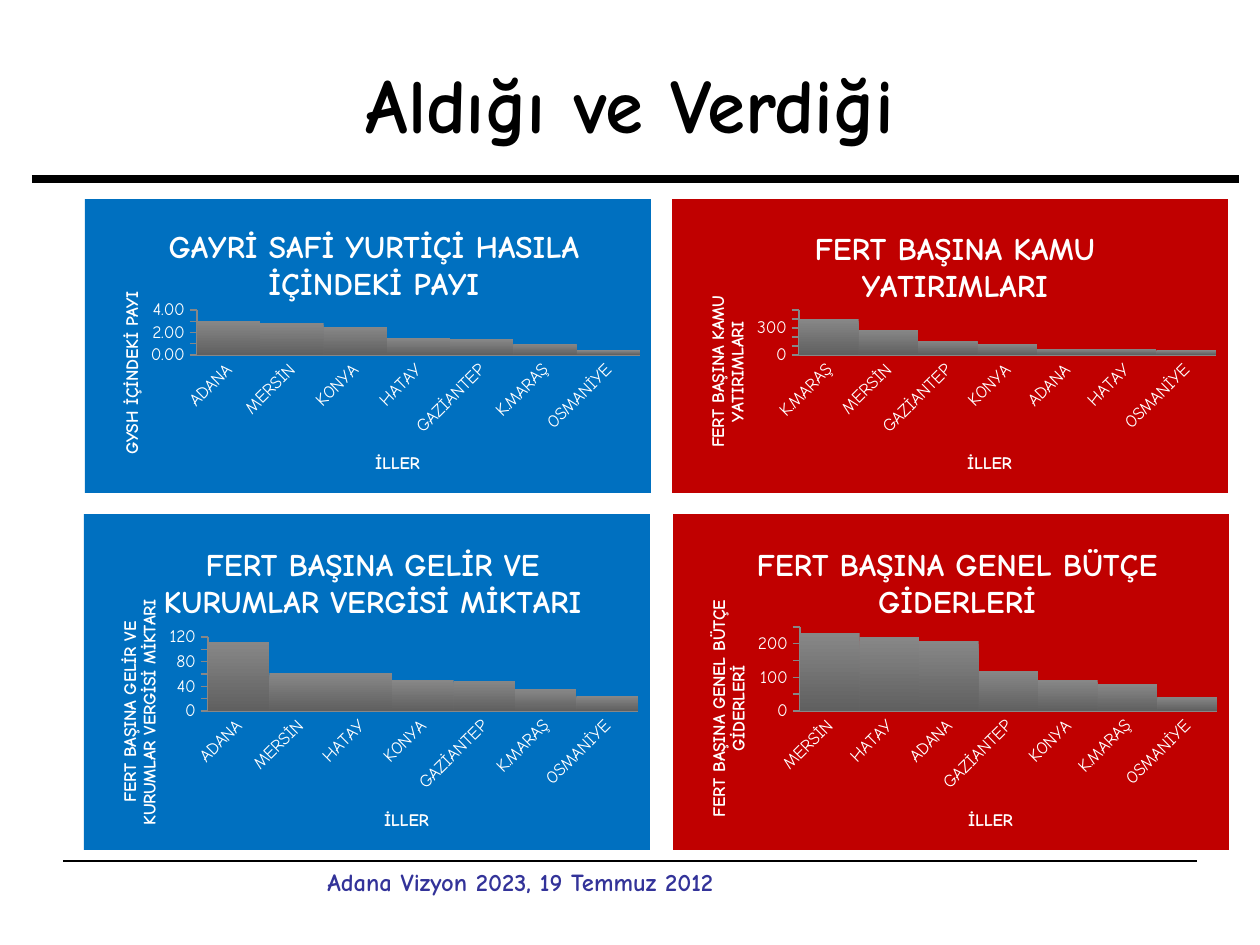
from collections import namedtuple

from lxml.etree import SubElement
from pptx import Presentation
from pptx.chart.data import CategoryChartData
from pptx.dml.color import RGBColor
from pptx.enum.chart import XL_CHART_TYPE as ChartType, XL_TICK_MARK as Tick
from pptx.enum.text import MSO_ANCHOR as Anchor, PP_ALIGN as Align
from pptx.oxml import parse_xml
from pptx.oxml.ns import nsdecls, qn
from pptx.util import Emu, Pt

FONT = "Comic Neue"
BLACK = RGBColor(0x00, 0x00, 0x00)
WHITE = RGBColor(0xFF, 0xFF, 0xFF)
NAVY = RGBColor(0x33, 0x33, 0x99)
BLUE = RGBColor(0x00, 0x70, 0xC0)
RED = RGBColor(0xC0, 0x00, 0x00)
LIGHT_GREY = RGBColor(0x87, 0x87, 0x87)
DARK_GREY = RGBColor(0x60, 0x60, 0x60)

Panel = namedtuple("Panel", "title measure area plot title_at cat_at val_at "
                   "color top step format values")
PANELS = [
    Panel("GAYRİ SAFİ YURTİÇİ HASILA İÇİNDEKİ PAYI", "GYSH İÇİNDEKİ PAYI",
          (85, 199, 566, 294), (197, 310, 443, 45), (163, 220), (372, 448),
          (117, 288), BLUE, 4, 1, "0.00",
          {"ADANA": 3, "MERSİN": 2.8, "KONYA": 2.5, "HATAY": 1.5,
           "GAZİANTEP": 1.4, "K.MARAŞ": 1, "OSMANİYE": 0.4}),
    Panel("FERT BAŞINA GELİR VE KURUMLAR VERGİSİ MİKTARI",
          "FERT BAŞINA GELİR VE KURUMLAR VERGİSİ MİKTARI",
          (84, 514, 566, 336), (208, 637, 430, 74), (158, 538), (381, 805),
          (115, 596), BLUE, 120, 20, "#,##0",
          {"ADANA": 112, "MERSİN": 61, "HATAY": 61, "KONYA": 50,
           "GAZİANTEP": 49, "K.MARAŞ": 35, "OSMANİYE": 24}),
    Panel("FERT BAŞINA GENEL BÜTÇE GİDERLERİ",
          "FERT BAŞINA GENEL BÜTÇE GİDERLERİ",
          (673, 514, 556, 336), (800, 627, 417, 84), (751, 538), (965, 805),
          (704, 597), RED, 250, 50, "#,##0",
          {"MERSİN": 232, "HATAY": 220, "ADANA": 208, "GAZİANTEP": 118,
           "KONYA": 91, "K.MARAŞ": 79, "OSMANİYE": 42}),
    Panel("FERT BAŞINA KAMU YATIRIMLARI", "FERT BAŞINA KAMU YATIRIMLARI",
          (672, 199, 556, 294), (799, 310, 417, 45), (809, 222), (964, 448),
          (703, 293), RED, 500, 100, "#,##0",
          {"K.MARAŞ": 400, "MERSİN": 280, "GAZİANTEP": 160, "KONYA": 120,
           "ADANA": 70, "HATAY": 70, "OSMANİYE": 50}),
]


def px(length):
    """Turn pixels into EMU."""
    return Emu(round(length * 914400 / 126))


def set_all(target, **values):
    """Set every given attribute on the target."""
    for name, value in values.items():
        setattr(target, name, value)


def style_font(font, size, color, bold):
    """Give a font its face, size, weight and colour."""
    set_all(font, name=FONT, size=Pt(size), bold=bold)
    font.color.rgb = color


def add_text(page, area, text, size, color, **layout):
    """Add a one-line bold text box."""
    box = page.shapes.add_textbox(*map(px, area))
    frame = box.text_frame
    set_all(frame, word_wrap=True,
            vertical_anchor=layout.get("anchor", Anchor.TOP))
    para = frame.paragraphs[0]
    para.alignment = layout.get("align", Align.LEFT)
    span = para.add_run()
    span.text = text
    style_font(span.font, size, color, True)


def add_rule(page, left, right, y, width):
    """Add a horizontal black line."""
    rule = page.shapes.add_connector(1, px(left), px(y), px(right), px(y))
    rule.line.color.rgb = BLACK
    rule.line.width = Pt(width)
    SubElement(rule._element.spPr, qn("a:effectLst"))


def place(element, index, area, spot, inner=False):
    """Fix a chart part at a spot given in slide pixels."""
    for old in element.findall(qn("c:layout")):
        element.remove(old)
    left, top, width, height = area
    values = [("xMode", "edge"), ("yMode", "edge"),
              ("x", (spot[0] - left) / width), ("y", (spot[1] - top) / height)]
    if inner:
        values.insert(0, ("layoutTarget", "inner"))
        values += [("w", spot[2] / width), ("h", spot[3] / height)]
    layout = parse_xml(f"<c:layout {nsdecls('c')}/>")
    manual = SubElement(layout, qn("c:manualLayout"))
    for name, value in values:
        text = value if isinstance(value, str) else f"{value:.4f}"
        SubElement(manual, qn(f"c:{name}")).set("val", text)
    element.insert(index, layout)


def solid_properties(color):
    """Make borderless solid shape properties for a chart part."""
    return parse_xml(
        f'<c:spPr {nsdecls("c", "a")}><a:solidFill><a:srgbClr val="{color}"/>'
        "</a:solidFill><a:ln><a:noFill/></a:ln></c:spPr>")


def rotate(element, degrees):
    """Turn the text of a chart part."""
    body = element.find(".//" + qn("a:bodyPr"))
    body.set("rot", str(degrees * 60000))
    body.set("vert", "horz")


def write_title(title, text, size, area, spot):
    """Fill, style and place a chart or axis title."""
    title.text_frame.text = text
    style_font(title.text_frame.paragraphs[0].runs[0].font, size, WHITE, True)
    place(title.element, 1, area, spot)


def style_axis(axis, tick):
    """Give an axis its line, tick marks and labels."""
    set_all(axis, has_major_gridlines=False, major_tick_mark=tick,
            minor_tick_mark=Tick.NONE)
    axis.format.line.color.rgb = LIGHT_GREY
    style_font(axis.tick_labels.font, 10, WHITE, False)


def style_bars(plot):
    """Join the columns and shade them from light to dark grey."""
    set_all(plot, gap_width=0, vary_by_categories=False)
    fill = plot.series[0].format.fill
    fill.gradient()
    fill.gradient_angle = 270
    for stop, color in zip(fill.gradient_stops, (LIGHT_GREY, DARK_GREY)):
        stop.color.rgb = color


def add_panel(page, panel):
    """Add one column chart on its coloured panel."""
    table = CategoryChartData()
    table.categories = list(panel.values)
    table.add_series("Series 1", list(panel.values.values()))
    chart = page.shapes.add_chart(ChartType.COLUMN_CLUSTERED,
                                  *map(px, panel.area), table).chart
    style_font(chart.font, 10, BLACK, False)
    set_all(chart, has_legend=False, has_title=True)
    style_bars(chart.plots[0])

    cities, amounts = chart.category_axis, chart.value_axis
    style_axis(cities, Tick.NONE)
    style_axis(amounts, Tick.OUTSIDE)
    set_all(amounts, minimum_scale=0, maximum_scale=panel.top,
            major_unit=panel.step)
    set_all(amounts.tick_labels, number_format=panel.format,
            number_format_is_linked=False)
    write_title(chart.chart_title, panel.title, 18, panel.area, panel.title_at)
    write_title(cities.axis_title, "İLLER", 10, panel.area, panel.cat_at)
    write_title(amounts.axis_title, panel.measure, 10, panel.area, panel.val_at)
    rotate(amounts.axis_title.element, -90)

    root = chart.element
    rotate(root.find(".//" + qn("c:catAx")).find(qn("c:txPr")), -45)
    plot_area = root.find(".//" + qn("c:plotArea"))
    place(plot_area, 0, panel.area, panel.plot, inner=True)
    plot_area.append(solid_properties(panel.color))
    root.find(qn("c:chart")).addnext(solid_properties(panel.color))


def main():
    """Build the slide and save it."""
    deck = Presentation()
    set_all(deck, slide_width=px(1260), slide_height=px(945))
    page = deck.slides.add_slide(deck.slide_layouts[6])
    add_rule(page, 32, 1239, 179, 4.5)
    add_rule(page, 63, 1197, 861, 1)
    add_text(page, (63, 38, 1134, 130), "Aldığı ve Verdiği", 44, BLACK,
             align=Align.CENTER, anchor=Anchor.MIDDLE)
    add_text(page, (315, 861, 630, 65), "Adana Vizyon 2023, 19 Temmuz 2012",
             14, NAVY)
    for panel in PANELS:
        add_panel(page, panel)
    deck.save("out.pptx")


if __name__ == "__main__":
    main()
